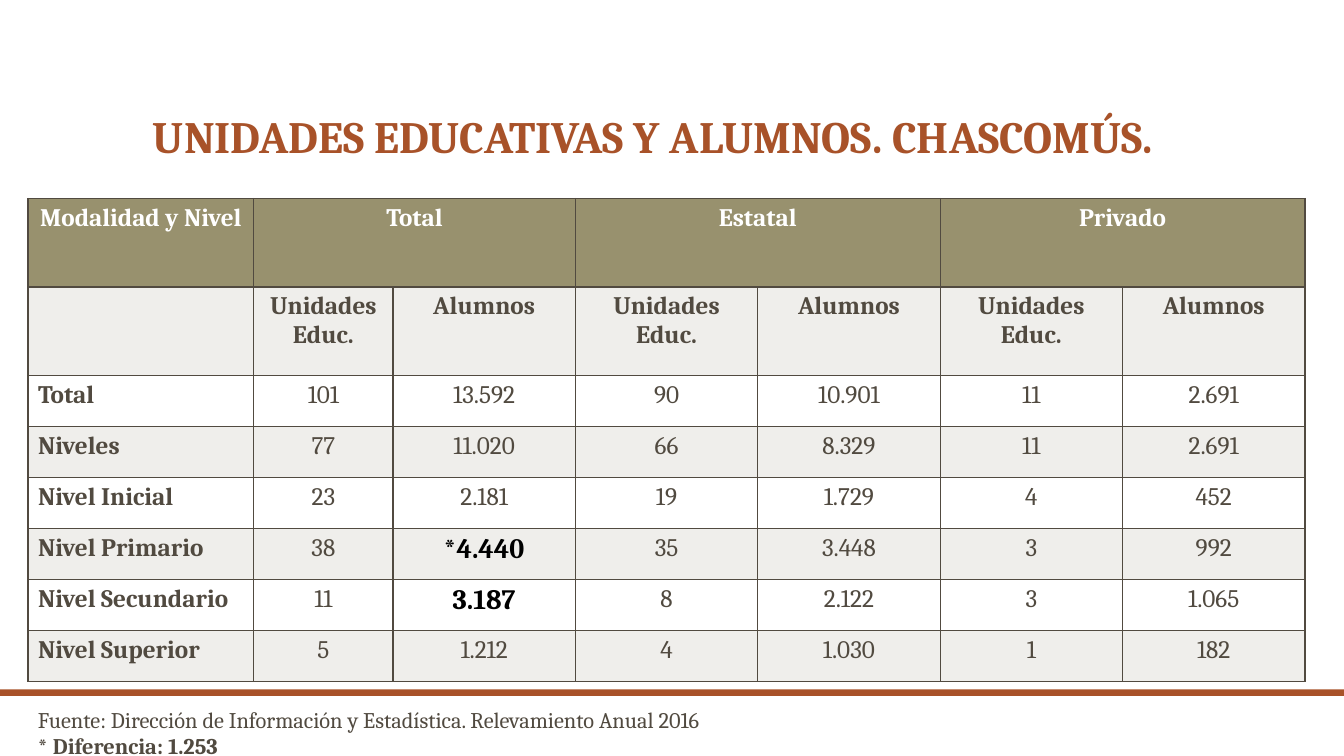
import pptx
import pptx.dml.color
import pptx.enum.shapes
import pptx.enum.text
import pptx.oxml
import pptx.oxml.ns
import pptx.util

Pt = pptx.util.Pt
ALIGN = pptx.enum.text.PP_ALIGN
ANCHOR = pptx.enum.text.MSO_ANCHOR


def rgb(value):
    return pptx.dml.color.RGBColor.from_string(value)


class Deck:
    FONT = "Cambria"
    TEXT, ACCENT, HEADER = "514A40", "A85229", "98916E"
    BAND, WHITE, BLACK = "EFEEEB", "FFFFFF", "000000"

    def __init__(self, width, height):
        self.prs = pptx.Presentation()
        self.prs.slide_width, self.prs.slide_height = Pt(width), Pt(height)
        self.s = self.prs.slides.add_slide(self.prs.slide_layouts[5])

    def style(self, p, text, size, color, bold=False, align=ALIGN.LEFT):
        p.text = text
        p.alignment = align
        p.font.name, p.font.size, p.font.bold = self.FONT, Pt(size), bold
        p.font.color.rgb = rgb(color)

    def title(self, text, x, y, w, h):
        sp = self.s.shapes.title
        sp.left, sp.top, sp.width, sp.height = Pt(x), Pt(y), Pt(w), Pt(h)
        tf = sp.text_frame
        tf.auto_size = pptx.enum.text.MSO_AUTO_SIZE.NONE
        tf.vertical_anchor = ANCHOR.BOTTOM
        p = tf.paragraphs[0]
        self.style(p, text, 32, self.ACCENT, True)
        p.line_spacing = 0.9

    def bar(self, x, y, w, h):
        sp = self.s.shapes.add_shape(
            pptx.enum.shapes.MSO_SHAPE.RECTANGLE, Pt(x), Pt(y), Pt(w), Pt(h))
        sp.shadow.inherit = False
        sp.fill.solid()
        sp.fill.fore_color.rgb = rgb(self.ACCENT)
        sp.line.fill.background()

    def note(self, lines, x, y, w, h):
        tf = self.s.shapes.add_textbox(Pt(x), Pt(y), Pt(w), Pt(h)).text_frame
        tf.word_wrap = True
        for i, (text, bold) in enumerate(lines):
            p = tf.add_paragraph() if i else tf.paragraphs[0]
            self.style(p, text, 16, self.TEXT, bold)

    def cell(self, cell, text, fill, size, color, bold, align):
        cell.fill.solid()
        cell.fill.fore_color.rgb = rgb(fill)
        self.style(cell.text_frame.paragraphs[0], text, size, color, bold, align)
        # Borders come before the fill in the cell properties
        for i, side in enumerate(("lnL", "lnR", "lnT", "lnB")):
            ln = pptx.oxml.parse_xml(
                f'<a:{side} {pptx.oxml.ns.nsdecls("a")} w="12700"><a:solidFill>'
                f'<a:srgbClr val="{self.TEXT}"/></a:solidFill></a:{side}>')
            cell._tc.get_or_add_tcPr().insert(i, ln)

    def table(self, rows, x, y, widths, heights, highlights):
        tbl = self.s.shapes.add_table(
            len(rows), len(widths), Pt(x), Pt(y),
            Pt(sum(widths)), Pt(sum(heights))).table
        for column, width in zip(tbl.columns, widths):
            column.width = Pt(width)
        for row, height in zip(tbl.rows, heights):
            row.height = Pt(height)
        for r, values in enumerate(rows):
            fill = self.HEADER if r == 0 else self.BAND if r % 2 else self.WHITE
            for c, text in enumerate(values):
                marked = (r, c) in highlights
                color = (self.WHITE if r == 0
                         else self.BLACK if marked else self.TEXT)
                self.cell(tbl.cell(r, c), text, fill, 20 if marked else 18, color,
                          r < 2 or c == 0 or marked,
                          ALIGN.LEFT if r > 0 and c == 0 else ALIGN.CENTER)
        # Each group heading spans its two columns
        for c in range(1, len(widths), 2):
            tbl.cell(0, c).merge(tbl.cell(0, c + 1))


def main():
    deck = Deck(960, 540)

    # Title and rule above the footer
    deck.title("UNIDADES EDUCATIVAS Y ALUMNOS. CHASCOMÚS.", 102, 30, 756, 90)
    deck.bar(0, 492.5, 960, 4.5)

    # Source and footnote
    deck.note([("Fuente: Dirección de Información y Estadística. "
                "Relevamiento Anual 2016", False),
               ("* Diferencia: 1.253", True)], 20, 500.5, 940, 46)

    # Schools and pupils by level
    rows = [
        ["Modalidad y Nivel", "Total", "", "Estatal", "", "Privado", ""],
        [""] + ["Unidades Educ.", "Alumnos"] * 3,
        ["Total", "101", "13.592", "90", "10.901", "11", "2.691"],
        ["Niveles", "77", "11.020", "66", "8.329", "11", "2.691"],
        ["Nivel Inicial", "23", "2.181", "19", "1.729", "4", "452"],
        ["Nivel Primario", "38", "*4.440", "35", "3.448", "3", "992"],
        ["Nivel Secundario", "11", "3.187", "8", "2.122", "3", "1.065"],
        ["Nivel Superior", "5", "1.212", "4", "1.030", "1", "182"],
    ]
    deck.table(rows, 20, 141.8, [161.3, 99.4] + [130.3] * 5,
               [63.2] * 2 + [36.5] * 6, {(5, 2), (6, 2)})

    deck.prs.save("out.pptx")


if __name__ == "__main__":
    main()
